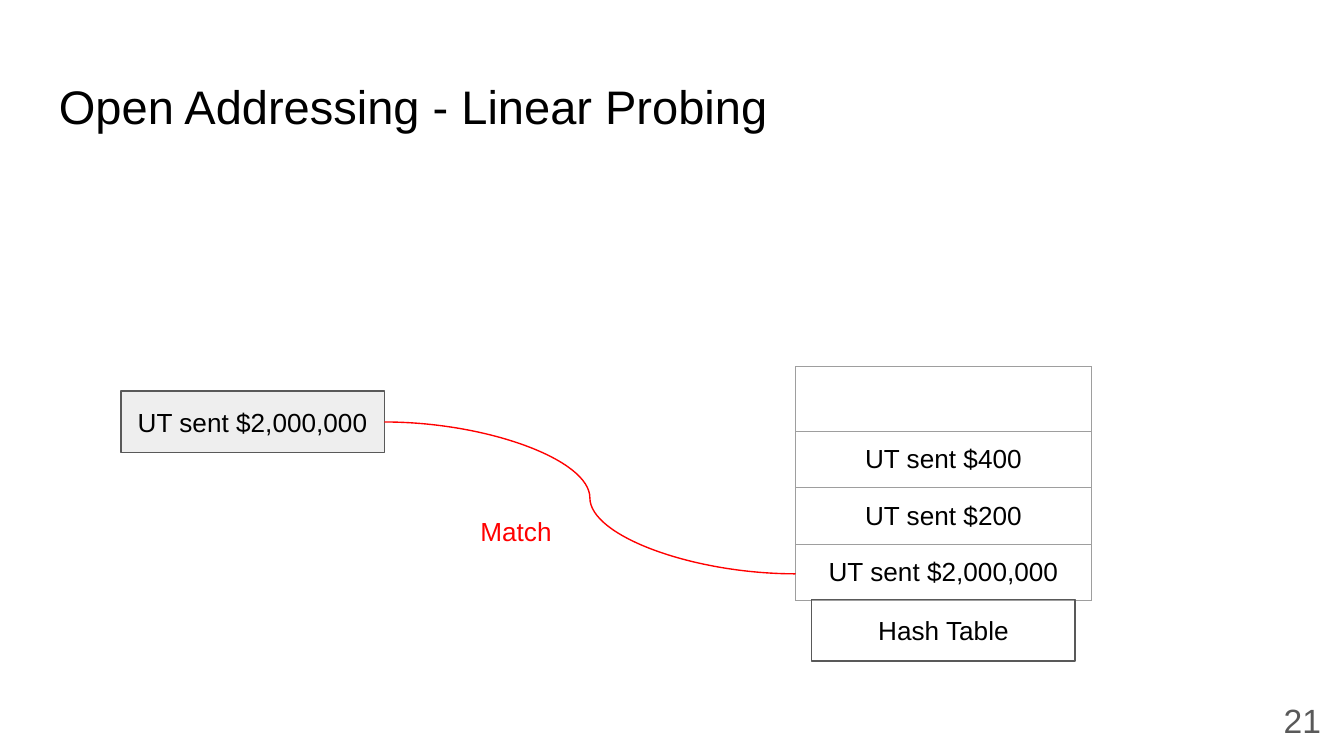
from dataclasses import dataclass

from lxml import etree
from pptx import Presentation
from pptx.dml.color import RGBColor
from pptx.enum import shapes, text
from pptx.oxml import ns
from pptx.util import Inches, Pt

BLACK, RED, GRAY, BORDER = "000000", "FF0000", "595959", "9E9E9E"
SLIDE_WIDTH = 10
ROW_HEIGHT = 0.42
BOX_WIDTH, BOX_HEIGHT = 1.96, 0.46


@dataclass
class Label:
    wording: str
    left: float
    top: float
    width: float = BOX_WIDTH
    height: float = BOX_HEIGHT
    size: float = 14
    color: str = BLACK
    align: text.PP_ALIGN = text.PP_ALIGN.CENTER
    anchor: text.MSO_ANCHOR = text.MSO_ANCHOR.MIDDLE


def rgb(value: str) -> RGBColor:
    return RGBColor.from_string(value)


def write(frame, wording: str, size: float, color: str, align) -> None:
    frame.text = wording
    paragraph = frame.paragraphs[0]
    paragraph.alignment = align
    for run in paragraph.runs:
        run.font.name = "Arial"
        run.font.size = Pt(size)
        run.font.color.rgb = rgb(color)


def fill_frame(frame, label: Label) -> None:
    frame.word_wrap = True
    frame.vertical_anchor = label.anchor
    frame.margin_left = frame.margin_right = Inches(0.1)
    frame.margin_top = frame.margin_bottom = Inches(0.1)
    write(frame, label.wording, label.size, label.color, label.align)


def bounds(label: Label) -> list:
    return [Inches(n) for n in (label.left, label.top, label.width, label.height)]


def add_label(slide, label: Label) -> None:
    fill_frame(slide.shapes.add_textbox(*bounds(label)).text_frame, label)


def add_box(slide, label: Label, fill: str = "") -> None:
    box = slide.shapes.add_shape(shapes.MSO_SHAPE.RECTANGLE, *bounds(label))
    box.shadow.inherit = False
    if fill:
        box.fill.solid()
        box.fill.fore_color.rgb = rgb(fill)
    else:
        box.fill.background()
    box.line.color.rgb = rgb(GRAY)
    box.line.width = Pt(0.75)
    fill_frame(box.text_frame, label)


def add_borders(cell) -> None:
    properties = cell._tc.get_or_add_tcPr()
    for position, side in enumerate(("lnL", "lnR", "lnT", "lnB")):
        border = etree.Element(ns.qn(f"a:{side}"), w=str(Pt(0.75)))
        solid = etree.SubElement(border, ns.qn("a:solidFill"))
        etree.SubElement(solid, ns.qn("a:srgbClr"), val=BORDER)
        properties.insert(position, border)


def add_hash_table(slide, entries: list[str], left: float, top: float, widths: list[float]) -> None:
    table = slide.shapes.add_table(
        len(entries), len(widths), Inches(left), Inches(top),
        Inches(sum(widths)), Inches(ROW_HEIGHT * len(entries)),
    ).table
    table.first_row = table.horz_banding = False
    for column, width in zip(table.columns, widths):
        column.width = Inches(width)
    for index, entry in enumerate(entries):
        table.rows[index].height = Inches(ROW_HEIGHT)
        for cell in table.rows[index].cells:
            cell.margin_left = cell.margin_right = cell.margin_top = Inches(0.1)
            cell.margin_bottom = Inches(0.08)
            cell.fill.background()
            add_borders(cell)
        bucket = table.cell(index, 0)
        bucket.merge(table.cell(index, len(widths) - 1))
        if entry:
            write(bucket.text_frame, entry, 14, BLACK, text.PP_ALIGN.CENTER)


def add_match_curve(slide, start: tuple[float, float], end: tuple[float, float]) -> None:
    curve = slide.shapes.add_connector(
        shapes.MSO_CONNECTOR.CURVE, *[Inches(n) for n in (*start, *end)]
    )
    curve.line.color.rgb = rgb(RED)
    curve.line.width = Pt(0.75)
    etree.SubElement(curve._element.spPr, ns.qn("a:effectLst"))


def main() -> None:
    deck = Presentation()
    deck.slide_width, deck.slide_height = Inches(SLIDE_WIDTH), Inches(SLIDE_WIDTH * 9 / 16)
    slide = deck.slides.add_slide(deck.slide_layouts[6])
    record = "UT sent $2,000,000"

    add_label(slide, Label("Open Addressing - Linear Probing", 0.34, 0.48, 9.32, 0.63, 25.2,
                           align=text.PP_ALIGN.LEFT, anchor=text.MSO_ANCHOR.TOP))
    add_hash_table(slide, ["", "UT sent $400", "UT sent $200", record], 5.92, 2.73, [1.67, 0.53])
    add_box(slide, Label("Hash Table", 6.04, 4.46))
    add_box(slide, Label(record, 0.9, 2.91), "EEEEEE")
    add_match_curve(slide, (0.9 + BOX_WIDTH, 2.91 + BOX_HEIGHT / 2), (5.92, 4.27))
    add_label(slide, Label("Match", 2.86, 3.72, color=RED))
    add_label(slide, Label("21", 9.42, 5.11, 0.54, 0.5, 18, GRAY, anchor=text.MSO_ANCHOR.TOP))
    deck.save("out.pptx")


if __name__ == "__main__":
    main()
